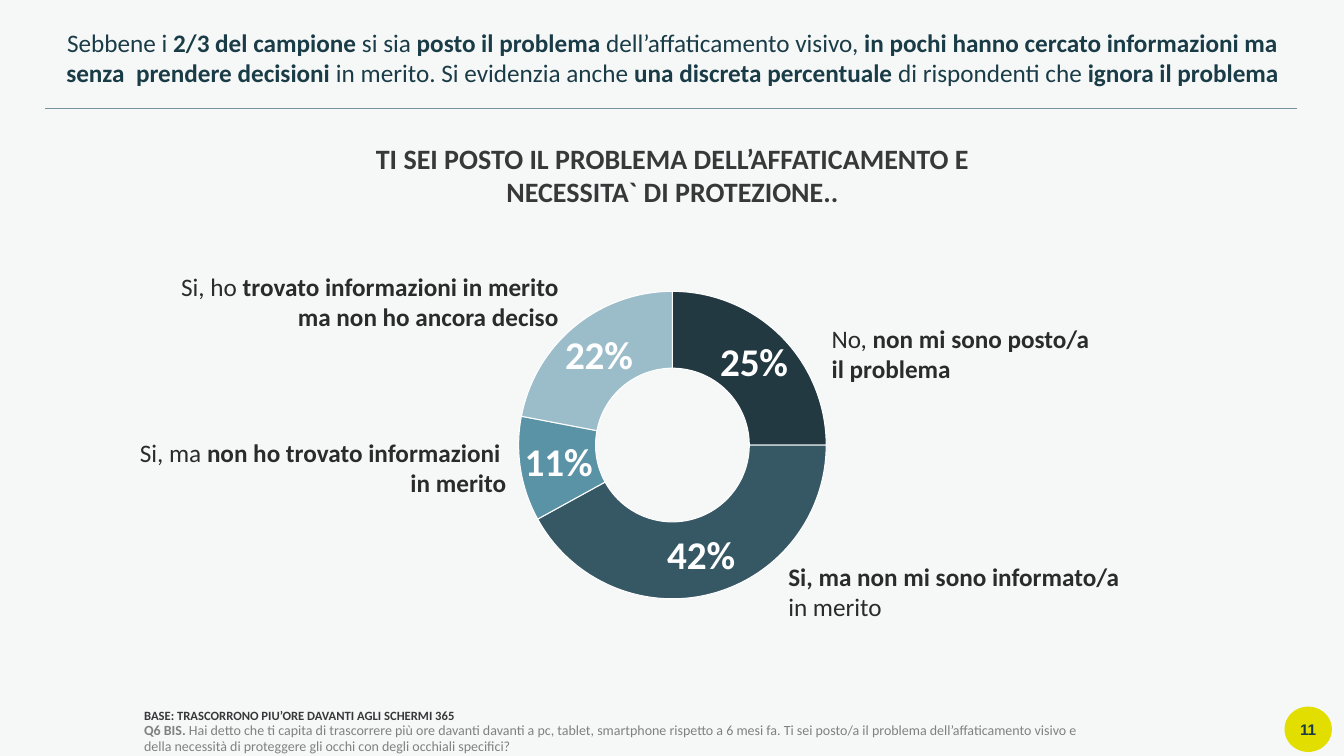
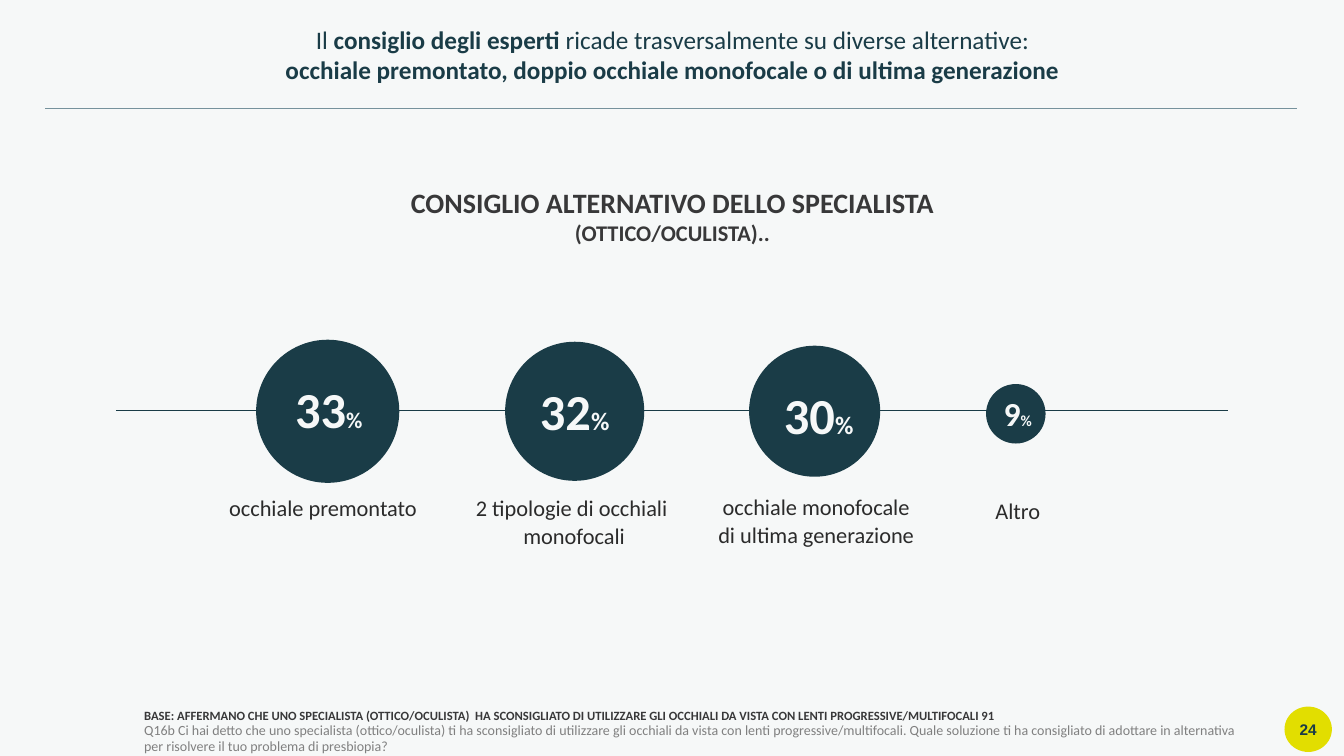
from dataclasses import dataclass

from lxml import etree
from pptx import Presentation
from pptx import util as u
from pptx.chart import data as chart_data
from pptx.dml import color as dml
from pptx.enum import chart as ch
from pptx.enum import shapes, text
from pptx.oxml import ns

PX = 9144  # one px is a hundredth of an inch


# Theme: colours and type sizes
@dataclass(frozen=True)
class Theme:
    font: str = "Calibri"
    badge_font: str = "Arial"
    background: str = "F6F8F8"
    navy: str = "1A3C47"
    badge_ink: str = "193B47"
    lime: str = "E2DE00"
    rule: str = "76929C"
    heading_ink: str = "383839"
    body_ink: str = "2B2B2B"
    grey: str = "808080"
    white: str = "FFFFFF"
    slices: tuple = ("233941", "365864", "5A92A6", "9BBDC9")
    title: int = 18
    heading: int = 20
    callout: int = 18
    caption: int = 16
    base: int = 9
    question: int = 10
    badge: int = 11
    chart_label: int = 28
    hairline: float = 0.5


THEME = Theme()
LEFT, CENTER, RIGHT = text.PP_ALIGN.LEFT, text.PP_ALIGN.CENTER, text.PP_ALIGN.RIGHT


@dataclass(frozen=True)
class Run:
    text: str
    size: int
    color: str
    bold: bool = False
    font: str = THEME.font


# Text
def rgb(value):
    return dml.RGBColor.from_string(value)


def px(*lengths):
    return [length * PX for length in lengths]


def marked(line, size, color):
    """Split a line into runs; parts between ** are bold."""
    return [Run(part, size, color, index % 2 == 1)
            for index, part in enumerate(line.split("**")) if part]


def write(frame, paragraphs, align=LEFT, spacing=1.0):
    for index, runs in enumerate(paragraphs):
        paragraph = frame.add_paragraph() if index else frame.paragraphs[0]
        paragraph.alignment = align
        paragraph.line_spacing = spacing
        paragraph.space_before = paragraph.space_after = u.Pt(0)
        for item in runs:
            run = paragraph.add_run()
            run.text = item.text
            run.font.name = item.font
            run.font.size = u.Pt(item.size)
            run.font.bold = item.bold
            run.font.color.rgb = rgb(item.color)


def clear_margins(frame):
    frame.margin_left = frame.margin_right = 0
    frame.margin_top = frame.margin_bottom = 0


def add_text(parent, box, paragraphs, align=LEFT, spacing=1.0, wrap=False):
    frame = parent.shapes.add_textbox(*px(*box)).text_frame
    frame.word_wrap = wrap
    frame.auto_size = text.MSO_AUTO_SIZE.SHAPE_TO_FIT_TEXT
    write(frame, paragraphs, align, spacing)
    return frame


# Shapes and lines
def add_ellipse(parent, box, color):
    ellipse = parent.shapes.add_shape(shapes.MSO_SHAPE.OVAL, *px(*box))
    ellipse.shadow.inherit = False
    ellipse.fill.solid()
    ellipse.fill.fore_color.rgb = rgb(color)
    ellipse.line.fill.background()
    return ellipse


def add_rule(slide, left, right, y, color):
    line = slide.shapes.add_connector(shapes.MSO_CONNECTOR.STRAIGHT, *px(left, y, right, y))
    line.line.color.rgb = rgb(color)
    line.line.width = u.Pt(THEME.hairline)
    etree.SubElement(line._element.spPr, ns.qn("a:effectLst"))


# Parts that every slide shares
def add_page(presentation, number, title_top, title_lines, base, question):
    slide = presentation.slides.add_slide(presentation.slide_layouts[5])

    badge = add_ellipse(slide, (1274, 701, 47, 45), THEME.lime).text_frame
    clear_margins(badge)
    badge.vertical_anchor = text.MSO_ANCHOR.MIDDLE
    write(badge, [[Run(number, THEME.badge, THEME.badge_ink, True, THEME.badge_font)]], CENTER)
    add_rule(slide, 45, 1286, 108, THEME.rule)

    title = slide.shapes.title
    title.left, title.top, title.width, title.height = px(34, title_top, 1266, 71)
    frame = title.text_frame
    frame.word_wrap = True
    frame.auto_size = text.MSO_AUTO_SIZE.NONE
    frame.vertical_anchor = text.MSO_ANCHOR.TOP
    write(frame, [marked(line, THEME.title, THEME.navy) for line in title_lines], CENTER)

    footnote = [[Run(base, THEME.base, THEME.heading_ink, True)]]
    footnote += [marked(line, THEME.question, THEME.grey) for line in question]
    frame = slide.shapes.add_textbox(*px(143, 656, 1190, 93)).text_frame
    frame.word_wrap = True
    frame.vertical_anchor = text.MSO_ANCHOR.BOTTOM
    clear_margins(frame)
    write(frame, footnote, spacing=0.95)
    return slide


def add_heading(slide, top, height, *parts):
    runs = [Run(words, size, THEME.heading_ink, True) for words, size in parts]
    add_text(slide, (352, top, 630, height), [runs], CENTER, wrap=True)


# Doughnut chart
def add_doughnut(slide, box, values):
    data = chart_data.CategoryChartData(number_format="0%")
    data.categories = [str(index + 1) for index in range(len(values))]
    data.add_series("Series 1", values)
    chart = slide.shapes.add_chart(ch.XL_CHART_TYPE.DOUGHNUT, *px(*box), data).chart
    chart.has_legend = chart.has_title = False
    chart.font.name = THEME.font
    chart.font.size = u.Pt(10)
    chart.font.color.rgb = rgb(THEME.body_ink)

    plot = chart.plots[0]
    plot.vary_by_categories = True
    for index, color in enumerate(THEME.slices):
        point = plot.series[0].points[index].format
        point.fill.solid()
        point.fill.fore_color.rgb = rgb(color)
        point.line.color.rgb = rgb(THEME.white)
        point.line.width = u.Pt(0.75)

    plot.has_data_labels = True
    labels = plot.data_labels
    labels.show_value = True
    labels.show_percentage = False
    labels.number_format = "0%"
    labels.number_format_is_linked = False
    labels.font.name = THEME.font
    labels.font.size = u.Pt(THEME.chart_label)
    labels.font.bold = True
    labels.font.color.rgb = rgb(THEME.white)

    # Hole size and the inner plot area
    area = chart._chartSpace.find(".//" + ns.qn("c:plotArea"))
    area.find(".//" + ns.qn("c:holeSize")).set("val", "60")
    for layout in area.findall(ns.qn("c:layout")):
        area.remove(layout)
    layout = etree.Element(ns.qn("c:layout"))
    manual = etree.SubElement(layout, ns.qn("c:manualLayout"))
    settings = (("layoutTarget", "inner"), ("xMode", "edge"), ("yMode", "edge"),
                ("x", "0.19"), ("y", "0.04"), ("w", "0.62"), ("h", "0.93"))
    for name, value in settings:
        etree.SubElement(manual, ns.qn("c:" + name)).set("val", value)
    area.insert(0, layout)


# Percentage bubble with its caption
def add_bubble(slide, circle, number_box, number, sizes):
    group = slide.shapes.add_group_shape()
    left, top, diameter = circle
    add_ellipse(group, (left, top, diameter, diameter), THEME.navy)
    runs = [Run(part, size, THEME.background, True) for part, size in zip((number, "%"), sizes)]
    add_text(group, number_box, [runs], CENTER)


def add_caption(slide, box, lines):
    add_text(slide, box, [[Run(line, THEME.caption, THEME.body_ink)] for line in lines],
             CENTER, spacing=1.07)


# Slides
def build_awareness(presentation):
    slide = add_page(
        presentation, "11", 22,
        ["Sebbene i **2/3 del campione** si sia **posto il problema **dell’affaticamento visivo, "
         "**in pochi hanno cercato informazioni ma senza  prendere decisioni **in merito. "
         "Si evidenzia anche **una discreta percentuale **di rispondenti che "
         "**ignora il problema**"],
        "BASE: TRASCORRONO PIU’ORE DAVANTI AGLI SCHERMI 365",
        ["**Q6 BIS. **Hai detto che ti capita di trascorrere più ore davanti davanti a pc, tablet, "
         "smartphone rispetto a 6 mesi fa. Ti sei posto/a il problema dell’affaticamento visivo e",
         "della necessità di proteggere gli occhi con degli occhiali specifici?"])
    add_heading(slide, 135, 77, (
        "TI SEI POSTO IL PROBLEMA DELL’AFFATICAMENTO E NECESSITA` DI PROTEZIONE..",
        THEME.heading))
    add_doughnut(slide, (411, 276, 512, 328), (0.25, 0.42, 0.11, 0.22))
    callouts = (
        (815, 316, 284, LEFT, "No, **non mi sono posto/a**", "**il problema**"),
        (772, 552, 357, LEFT, "**Si, ma non mi sono informato/a**", "in merito"),
        (125, 429, 387, RIGHT, "Si, ma **non ho trovato informazioni **", "**in merito**"),
        (168, 264, 396, RIGHT, "Si, ho **trovato informazioni in merito**",
         "**ma non ho ancora deciso**"),
    )
    for left, top, width, align, *lines in callouts:
        add_text(slide, (left, top, width, 71),
                 [marked(line, THEME.callout, THEME.body_ink) for line in lines], align)


def build_advice(presentation):
    slide = add_page(
        presentation, "24", 19,
        ["Il **consiglio degli esperti **ricade trasversalmente su diverse alternative:",
         "**occhiale premontato, doppio occhiale monofocale o di ultima generazione**"],
        "BASE: AFFERMANO CHE UNO SPECIALISTA (OTTICO/OCULISTA)  HA SCONSIGLIATO DI UTILIZZARE "
        "GLI OCCHIALI DA VISTA CON LENTI PROGRESSIVE/MULTIFOCALI 91",
        ["Q16b Ci hai detto che uno specialista (ottico/oculista) ti ha sconsigliato di utilizzare "
         "gli occhiali da vista con lenti progressive/multifocali. Quale soluzione ti ha "
         "consigliato di adottare in alternativa",
         "per risolvere il tuo problema di presbiopia?"])
    add_heading(slide, 179, 71, ("CONSIGLIO ALTERNATIVO DELLO SPECIALISTA ", THEME.heading),
                ("(OTTICO/OCULISTA)..", 16))
    add_rule(slide, 115, 1218, 407, THEME.navy)
    bubbles = (
        ((254, 337, 142), (282, 370, 88, 71), "33", (36, 16),
         (216, 483, 214, 38), ["occhiale premontato "]),
        ((501, 339, 138), (525, 372, 90, 71), "32", (36, 18),
         (461, 483, 217, 66), ["2 tipologie di occhiali ", "monofocali"]),
        ((743, 343, 130), (767, 376, 90, 71), "30", (36, 18),
         (701, 482, 222, 66), ["occhiale monofocale ", "di ultima generazione "]),
        ((978, 381, 59), (985, 385, 49, 50), "9", (24, 11),
         (977, 486, 65, 38), ["Altro"]),
    )
    for circle, number_box, number, sizes, caption_box, lines in bubbles:
        add_bubble(slide, circle, number_box, number, sizes)
        add_caption(slide, caption_box, lines)


def main():
    presentation = Presentation()
    presentation.slide_width, presentation.slide_height = px(1333, 750)
    background = presentation.slide_master.background.fill
    background.solid()
    background.fore_color.rgb = rgb(THEME.background)
    build_awareness(presentation)
    build_advice(presentation)
    presentation.save("out.pptx")


if __name__ == "__main__":
    main()
